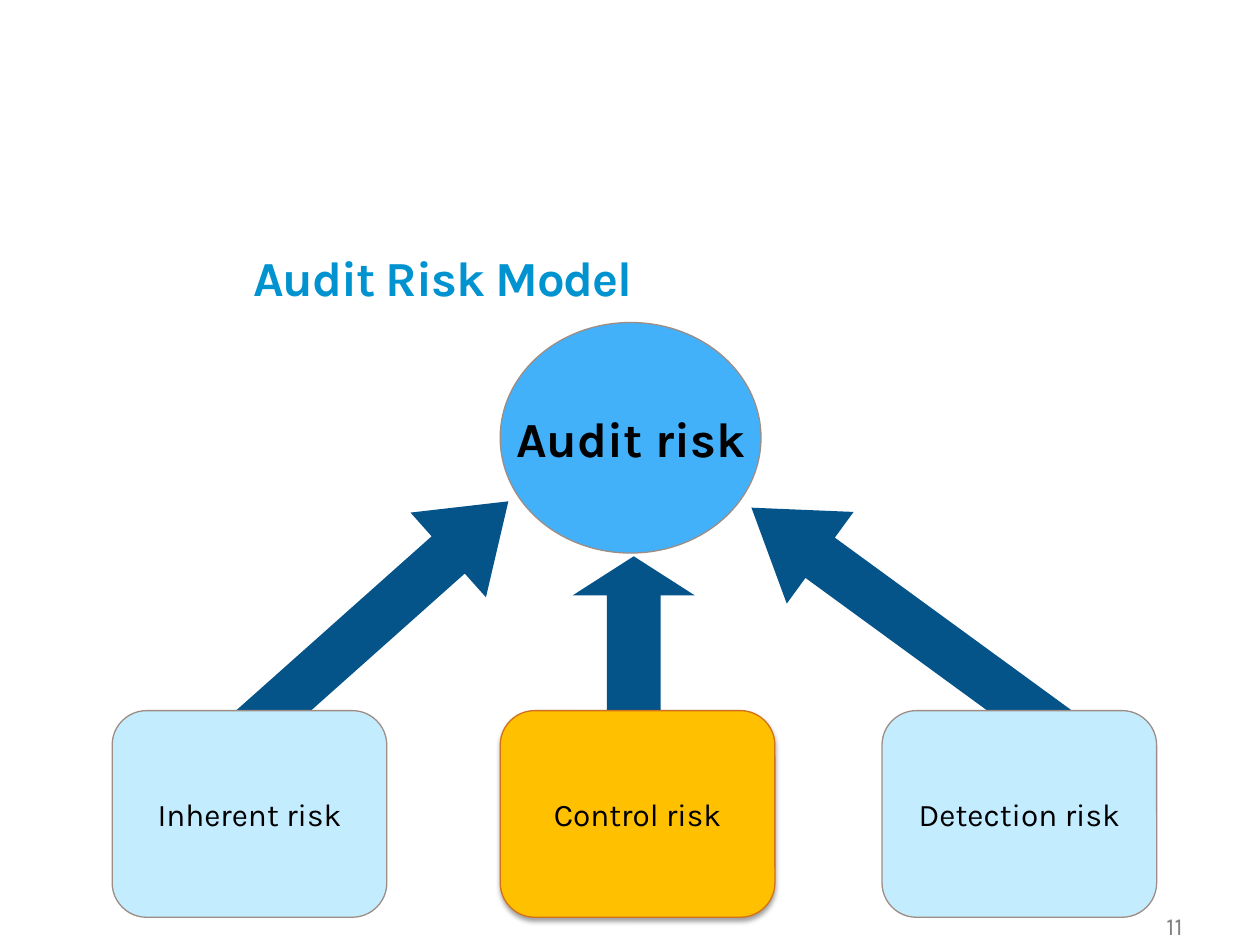
import pptx
import pptx.util
import pptx.dml.color
import pptx.enum.shapes
import pptx.enum.text
import pptx.oxml

Inches = pptx.util.Inches
Pt = pptx.util.Pt
Kind = pptx.enum.shapes.MSO_SHAPE
Align = pptx.enum.text.PP_ALIGN
Anchor = pptx.enum.text.MSO_ANCHOR

hues = {
    "title": "0093D0", "page": "808080", "text": "000000",
    "circle": "43B1FA", "arrow": "04548A", "edge": "9D8D85",
    "box": "C3EDFF", "focus": "FFC000", "rim": "D0711C",
}


def color(name):
    return pptx.dml.color.RGBColor.from_string(hues[name])


def write(shape, text, size, hue, bold=False, align=Align.LEFT, inset=None, wrap=True):
    frame = shape.text_frame
    frame.word_wrap = wrap
    frame.vertical_anchor = Anchor.MIDDLE
    if inset is not None:
        frame.margin_left = frame.margin_right = Inches(inset)
        frame.margin_top = frame.margin_bottom = Inches(inset)
    para = frame.paragraphs[0]
    para.alignment = align
    run = para.add_run()
    run.text = text
    run.font.name = "Karla"
    run.font.size = Pt(size)
    run.font.bold = bold
    run.font.color.rgb = color(hue)
    return run


deck = pptx.Presentation()
deck.slide_width, deck.slide_height = Inches(10), Inches(7.5)
slide = deck.slides.add_slide(deck.slide_layouts[6])
shapes = slide.shapes

# Page number and title
page = shapes.add_textbox(Inches(9.16), Inches(7.15), Inches(0.5), Inches(0.4))
write(page, "11", 14, "page")
title = shapes.add_textbox(Inches(1.91), Inches(1.76), Inches(7.59), Inches(0.87))
run = write(title, "Audit Risk Model", 28, "title", bold=True)
run.font._element.set("spc", "-60")

# Arrows, placed before the boxes that cover their tails
arrows = [
    (1.59, 4.46, 2.8, 0.9, 318.3, 0.71),
    (5.66, 4.51, 3.16, 0.9, 216.1, 0.75),
    (4.41, 4.55, 1.24, 0.97, 270, 0.32),
]
for left, top, width, height, turn, head in arrows:
    arrow = shapes.add_shape(Kind.RIGHT_ARROW, Inches(left), Inches(top),
                             Inches(width), Inches(height))
    arrow.rotation = turn
    arrow.adjustments[0] = 0.44
    arrow.adjustments[1] = head
    arrow.shadow.inherit = False
    arrow.fill.solid()
    arrow.fill.fore_color.rgb = color("arrow")
    arrow.line.fill.background()

# Circle on top, three risk boxes below
round_box = Kind.ROUNDED_RECTANGLE
nodes = [
    ("Audit risk", Kind.OVAL, 3.97, 2.56, 2.07, 1.83, "circle", "edge", 0, 28),
    ("Inherent risk", round_box, 0.89, 5.64, 2.18, 1.64, "box", "edge", 0, 18),
    ("Control risk", round_box, 3.97, 5.64, 2.18, 1.64, "focus", "rim", 0.75, 18),
    ("Detection risk", round_box, 7, 5.64, 2.18, 1.64, "box", "edge", 0, 18),
]
for text, kind, left, top, width, height, fill, edge, line, size in nodes:
    node = shapes.add_shape(kind, Inches(left), Inches(top), Inches(width), Inches(height))
    node.shadow.inherit = False
    node.fill.solid()
    node.fill.fore_color.rgb = color(fill)
    node.line.color.rgb = color(edge)
    node.line.width = Pt(line)
    top_node = kind == Kind.OVAL
    write(node, text, size, "text", bold=top_node, align=Align.CENTER,
          inset=0, wrap=not top_node)

    # Soft shadow under the highlighted box
    if fill == "focus":
        effects = node._element.spPr.find(pptx.oxml.ns.qn("a:effectLst"))
        effects.append(pptx.oxml.parse_xml(
            '<a:outerShdw xmlns:a="http://schemas.openxmlformats.org/drawingml/2006/main"'
            f' blurRad="{Pt(3.1)}" dist="{Pt(1.6)}" dir="5400000" rotWithShape="0">'
            '<a:srgbClr val="000000"><a:alpha val="38000"/></a:srgbClr></a:outerShdw>'))

deck.save("out.pptx")
